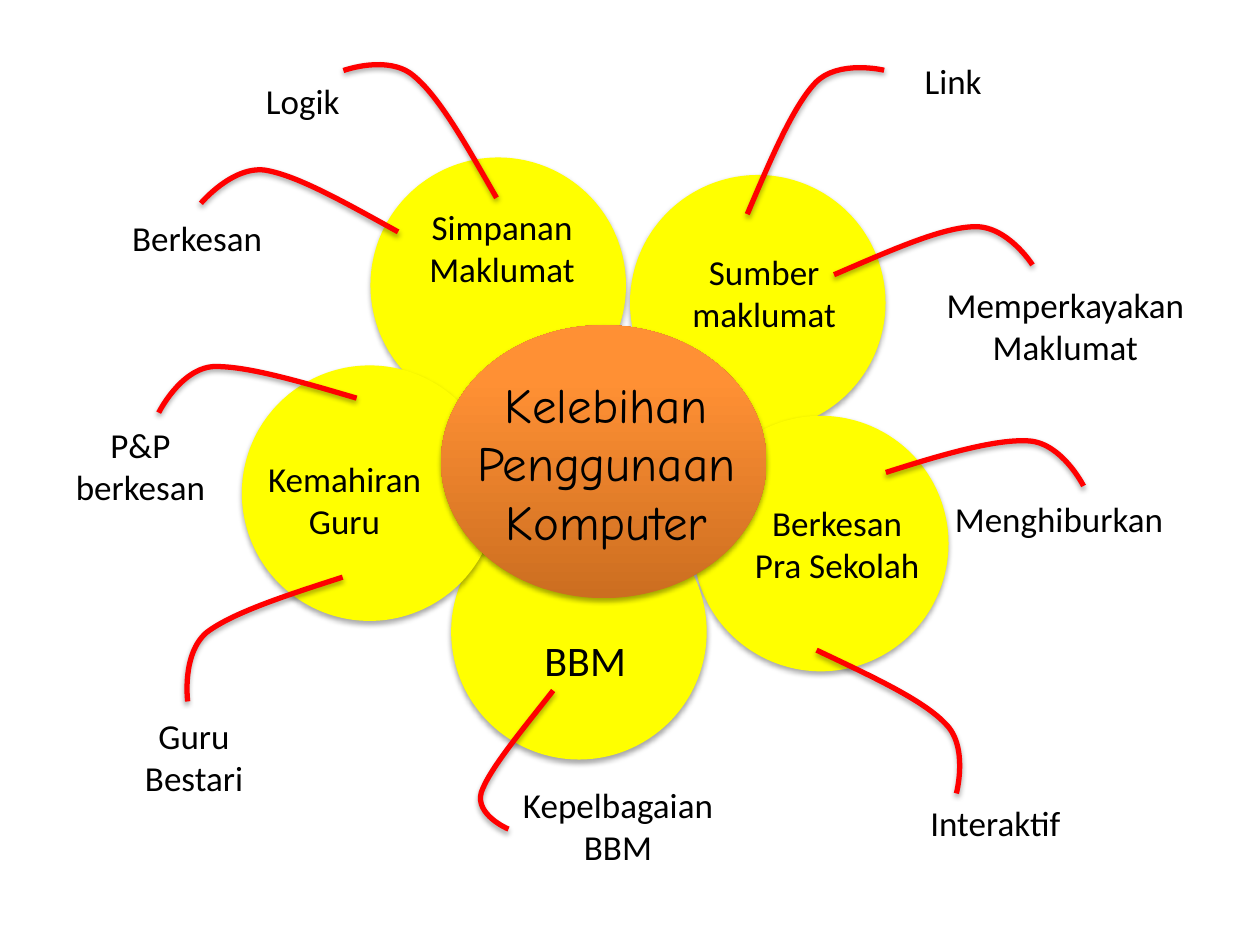
from lxml.etree import SubElement
from pptx import Presentation
from pptx.dml.color import RGBColor
from pptx.enum.shapes import MSO_SHAPE as SHAPE
from pptx.enum.text import MSO_AUTO_SIZE as AUTO_SIZE, PP_ALIGN as ALIGN
from pptx.oxml.ns import qn
from pptx.util import Pt

BLACK = RGBColor(0x00, 0x00, 0x00)
YELLOW = RGBColor(0xFF, 0xFF, 0x00)
RED = RGBColor(0xFF, 0x00, 0x00)
ORANGE = RGBColor(0xFF, 0x90, 0x34)
DARK_ORANGE = RGBColor(0xCC, 0x6E, 0x20)

PETAL_SIZE = 146
LABEL_W = 141.8

# circle left and top, label left and top, label, text size
PETALS = [
    (211.7, 90, 216, 113.8, "Simpanan\nMaklumat", 20),
    (360, 100, 365.8, 139.7, "Sumber maklumat", 20),
    (396, 237.6, 407.5, 283, "Berkesan\nPra Sekolah", 20),
    (257.8, 288, 263.5, 359.3, "BBM", 24),
    (138.2, 208.8, 126, 257.8, "Kemahiran\nGuru", 20),
]

# label, its left, top and width, then the curve:
# start, two controls, knee, one control, tip
BRANCHES = [
    ("Logik", 102.2, 41.8, LABEL_W,
     [(283.7, 113), (267.1, 84.2), (251.3, 55.4), (236.2, 43.2), (221.8, 31), (196.2, 40.3)]),
    ("Berkesan", 41.8, 120.2, LABEL_W,
     [(227.5, 132.5), (198.7, 116.6), (169.9, 100.1), (151.2, 97.2), (132.5, 95), (114.8, 116.2)]),
    ("Link", 473.8, 30.2, LABEL_W,
     [(427, 122.4), (439.9, 92.2), (452.9, 61.2), (465.8, 47.5), (478.8, 33.8), (505.2, 40.2)]),
    ("Memperkayakan Maklumat", 531.4, 158.4, 154.8,
     [(476.6, 157), (506.9, 144), (537.1, 130.3), (555.8, 129.6), (575.3, 128.2), (590, 151.4)]),
    ("Menghiburkan", 528.5, 280.8, 153.4,
     [(506.2, 270), (537.8, 259.9), (569.5, 250.6), (588.2, 252), (607, 253.4), (619.2, 277.7)]),
    ("Interaktif", 489.6, 454.3, 158.4,
     [(466.6, 371.5), (496.8, 385.9), (527, 399.6), (540, 413.3), (553.7, 426.2), (546.5, 453.4)]),
    ("Kepelbagaian\nBBM", 288, 444.2, 130.3,
     [(316.1, 394.6), (298.1, 417.6), (279.4, 439.9), (275, 452.9), (271.4, 465.8), (290.6, 473.8)]),
    ("P&P berkesan", 23.8, 238.3, 113,
     [(203.8, 227.5), (172.1, 218.2), (140.4, 208.8), (121.7, 209.5), (103, 211), (90.7, 235.8)]),
    ("Guru Bestari", 54, 404.6, 113.8,
     [(195.8, 329.8), (164.9, 339.8), (133.2, 349.9), (118.1, 361.4), (103.7, 373.7), (107.3, 400.8)]),
]


def add_shadow(effects, blur, dist):
    """Put a soft shadow, falling straight down, into an effect list."""
    shadow = SubElement(effects, qn("a:outerShdw"), blurRad=str(Pt(blur)),
                        dist=str(Pt(dist)), dir="5400000", rotWithShape="0")
    color = SubElement(shadow, qn("a:srgbClr"), val="000000")
    SubElement(color, qn("a:alpha"), val="35000")


def add_shape_shadow(s):
    s.shadow.inherit = False
    add_shadow(s.element.spPr.find(qn("a:effectLst")), 3.1, 1.8)


def add_text(shapes, text, x, y, w, h, size=20, font="Calibri", shadow=False):
    """Add a centred label, one paragraph for each line of text."""
    tf = shapes.add_textbox(Pt(x), Pt(y), Pt(w), Pt(h)).text_frame
    tf.word_wrap = True
    tf.auto_size = AUTO_SIZE.SHAPE_TO_FIT_TEXT
    tf.text = text
    for p in tf.paragraphs:
        p.alignment = ALIGN.CENTER
        for r in p.runs:
            r.font.size = Pt(size)
            r.font.color.rgb = BLACK
            if shadow:
                add_shadow(SubElement(r.font._element, qn("a:effectLst")), 3, 3)
            r.font.name = font


def add_ellipse(shapes, x, y, w, h):
    s = shapes.add_shape(SHAPE.OVAL, Pt(x), Pt(y), Pt(w), Pt(h))
    s.line.fill.background()
    add_shape_shadow(s)
    return s


def add_petal(shapes, x, y, text_x, text_y, text, size):
    s = add_ellipse(shapes, x, y, PETAL_SIZE, PETAL_SIZE)
    s.fill.solid()
    s.fill.fore_color.rgb = YELLOW
    add_text(shapes, text, text_x, text_y, LABEL_W, 55.4 if size == 20 else 36, size=size)


def add_curve(shapes, points):
    """Draw two joined Bezier curves; the second rests on its end point."""
    start, *rest = [(Pt(x), Pt(y)) for x, y in points + points[-1:]]
    builder = shapes.build_freeform(*start)
    builder.add_line_segments(rest, close=False)
    s = builder.convert_to_shape()
    path = next(s.element.iter(qn("a:path")))
    segments = path.findall(qn("a:lnTo"))
    for i in range(0, len(segments), 3):
        curve = SubElement(path, qn("a:cubicBezTo"))
        for segment in segments[i:i + 3]:
            curve.append(segment[0])
            path.remove(segment)
    s.fill.background()
    s.line.color.rgb = RED
    s.line.width = Pt(3)
    add_shape_shadow(s)


def add_branch(shapes, text, x, y, w, points):
    add_curve(shapes, points)
    two_lines = "\n" in text or " " in text
    add_text(shapes, text, x, y, w, 55.4 if two_lines else 31.5)


def add_centre(shapes):
    s = add_ellipse(shapes, 252, 185.8, 186, 156)
    s.fill.gradient()
    s.fill.gradient_angle = 90
    for stop, color, position in zip(s.fill.gradient_stops, (DARK_ORANGE, ORANGE), (0, 0.8)):
        stop.color.rgb = color
        stop.position = position
    add_text(shapes, "Kelebihan\nPenggunaan Komputer", 264, 210.2, 165, 108.7,
             size=28, font="Comic Neue", shadow=True)


def main():
    prs = Presentation()
    prs.slide_width, prs.slide_height = Pt(720), Pt(540)
    shapes = prs.slides.add_slide(prs.slide_layouts[6]).shapes
    for petal in PETALS:
        add_petal(shapes, *petal)
    for branch in BRANCHES:
        add_branch(shapes, *branch)
    add_centre(shapes)
    prs.save("out.pptx")


if __name__ == "__main__":
    main()
